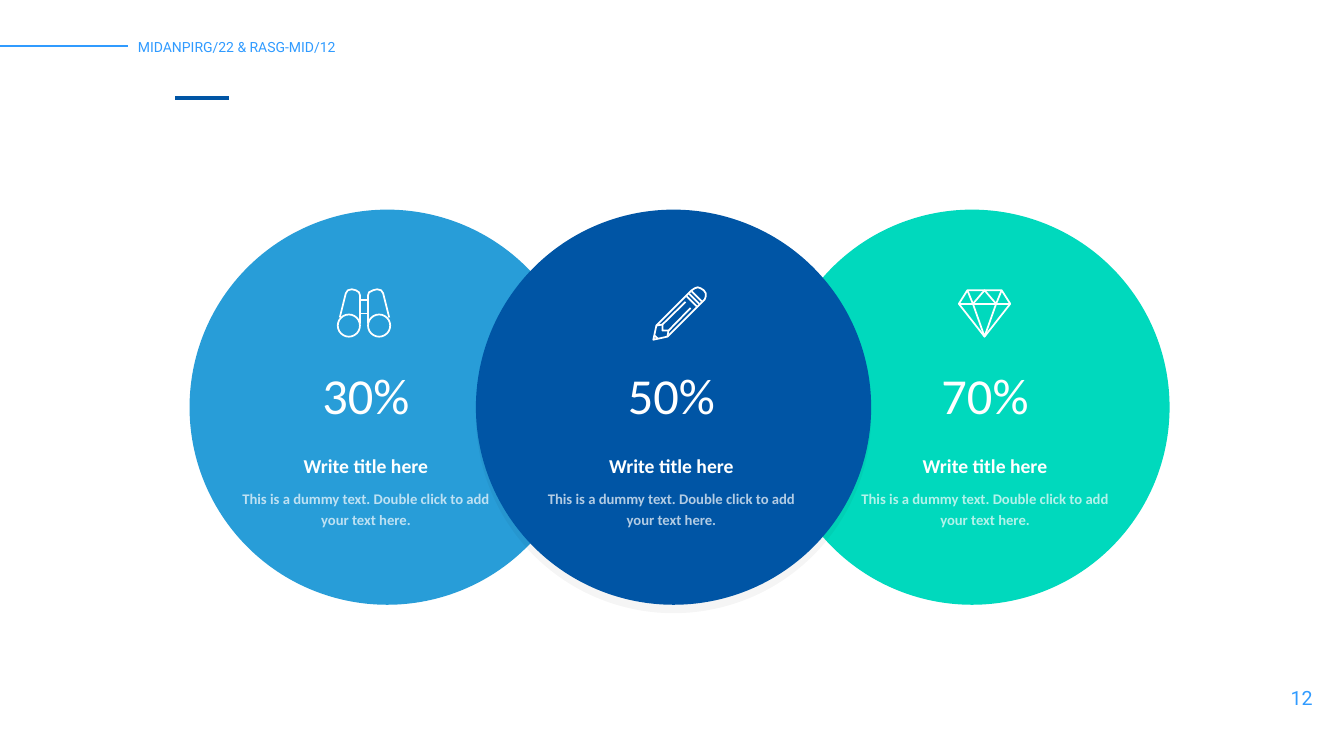
"""Build a slide of three overlapping circles with icons, percentages and captions."""
from lxml.etree import SubElement
from pptx import Presentation
from pptx.dml.color import RGBColor
from pptx.enum.shapes import MSO_CONNECTOR as Connector, MSO_SHAPE as Shape
from pptx.enum.text import MSO_ANCHOR as Anchor, PP_ALIGN as Align
from pptx.oxml.ns import qn
from pptx.util import Inches, Pt

WHITE, SKY, NAVY = "FFFFFF", "309BFF", "0055A5"


def paint(color_format, color, alpha=None):
    color_format.rgb = RGBColor.from_string(color)
    if alpha:
        srgb = color_format._color._xClr
        SubElement(srgb, qn("a:alpha"), val=str(alpha * 1000))


def write(box, paragraphs, align, margins, wrap, spacing=1.0):
    frame = slide.shapes.add_textbox(*map(Inches, box)).text_frame
    side, edge = map(Inches, margins)
    layout = {"word_wrap": wrap, "vertical_anchor": Anchor.TOP,
              "margin_left": side, "margin_right": side,
              "margin_top": edge, "margin_bottom": edge}
    for attribute, value in layout.items():
        setattr(frame, attribute, value)
    for index, (words, font, color, alpha) in enumerate(paragraphs):
        paragraph = frame.add_paragraph() if index else frame.paragraphs[0]
        paragraph.alignment = align
        paragraph.line_spacing = spacing
        if index:
            paragraph.space_before = Pt(6)
        run = paragraph.add_run()
        run.text = words
        for attribute, value in font.items():
            setattr(run.font, attribute, value)
        paint(run.font.color, color, alpha)


deck = Presentation()
deck.slide_width, deck.slide_height = Inches(13.33), Inches(7.5)
slide = deck.slides.add_slide(deck.slide_layouts[6])

page_font = {"name": "Roboto", "size": Pt(14)}
header_font = {"name": "Roboto", "size": Pt(10)}
percent_font = {"name": "Calibri", "size": Pt(36)}
heading_font = {"name": "Calibri", "size": Pt(14), "bold": True}
caption_font = {"name": "Calibri", "size": Pt(10.5), "bold": True}

write((12.31, 6.8, 1.2, 0.33), [("12", page_font, SKY, None)],
      Align.CENTER, (0, 0), False)
write((1.27, 0.33, 3.63, 0.27),
      [("MIDANPIRG/22 & RASG-MID/12", header_font, SKY, None)],
      Align.LEFT, (0.1, 0.05), True)

for start, end, height, color, width in [(0, 1.27, 0.46, SKY, 1.5),
                                         (1.74, 2.27, 0.97, NAVY, 3)]:
    rule = slide.shapes.add_connector(
        Connector.STRAIGHT, *map(Inches, (start, height, end, height)))
    rule.line.width = Pt(width)
    paint(rule.line.color, color)
    SubElement(rule._element.spPr, qn("a:effectLst"))

for left, color in [(1.88, "289DD8"), (7.68, "00D9BD"), (4.72, NAVY)]:
    circle = slide.shapes.add_shape(
        Shape.OVAL, *map(Inches, (left, 2.08, 3.92, 3.92)))
    circle.shadow.inherit = False
    circle.fill.solid()
    paint(circle.fill.fore_color, color)
    circle.line.fill.background()
    if color == NAVY:
        effects = circle._element.spPr.find(qn("a:effectLst"))
        shade = SubElement(effects, qn("a:outerShdw"), blurRad="0",
                           dist=str(Pt(6)), dir="5400000", algn="t",
                           rotWithShape="0")
        black = SubElement(shade, qn("a:srgbClr"), val="000000")
        SubElement(black, qn("a:alpha"), val="4000")

# Icon strokes are in hundredths of an inch from each icon's corner.
binoculars = [
    [(2, 31), (8, 7), (10, 4), (14, 3), (18, 4), (21, 6), (22, 9), (22, 37)],
    [(51, 31), (45, 7), (43, 4), (39, 3), (35, 4), (31, 6), (30, 9), (30, 37)],
    [(22, 14), (30, 14)],
    [(22, 27), (30, 27)],
]
pencil = [
    [(1, 53), (4, 39), (39, 4), (42, 2), (45, 1), (48, 2), (51, 4), (53, 7),
     (53, 10), (52, 13), (50, 15), (15, 50), (1, 53)],
    [(4, 39), (10, 38), (10, 44), (16, 44), (15, 50)],
    [(10, 38), (33, 15.5)],
    [(16, 44), (38, 21.5)],
    [(34, 10), (44, 20)],
    [(36.5, 7.5), (46.5, 17.5)],
    [(39, 5), (49, 15)],
    [(2.5, 49), (5, 51.5)],
]
diamond = [
    [(1, 14.5), (9.5, 1), (43.5, 1), (52, 14.5), (26.5, 47), (1, 14.5)],
    [(1, 14.5), (52, 14.5)],
    [(9.5, 1), (15, 14.5), (26.5, 47), (38, 14.5), (43.5, 1)],
    [(15, 14.5), (26.5, 1), (38, 14.5)],
]

columns = [(3.63, "30%", binoculars, 3.35, 2.84),
           (6.66, "50%", pencil, 6.47, 2.84),
           (9.77, "70%", diamond, 9.5, 2.87)]
for center, percent, strokes, icon_left, icon_top in columns:
    placed = [[(Inches(icon_left + x / 100), Inches(icon_top + y / 100))
               for x, y in stroke] for stroke in strokes]
    sketch = slide.shapes.build_freeform(*placed[0][0])
    for stroke in placed:
        sketch.move_to(*stroke[0])
        sketch.add_line_segments(stroke[1:], close=False)
    icon_parts = [sketch.convert_to_shape()]
    if strokes is binoculars:
        icon_parts += [slide.shapes.add_shape(
            Shape.OVAL, *map(Inches, (lens_left, 3.12, 0.22, 0.22)))
            for lens_left in (3.35, 3.65)]
    for part in icon_parts:
        part.shadow.inherit = False
        part.fill.background()
        part.line.width = Pt(1.25)
        paint(part.line.color, WHITE)
    for part in icon_parts[1:]:
        part.fill.solid()
        paint(part.fill.fore_color, "289DD8")

    write((center - 0.5, 3.56, 1, 0.71),
          [(percent, percent_font, WHITE, None)],
          Align.CENTER, (0, 0.05), False)
    write((center - 1.25, 4.41, 2.5, 0.89),
          [("Write title here", heading_font, WHITE, None),
           ("This is a dummy text. Double click to add your text here.",
            caption_font, WHITE, 70)],
          Align.CENTER, (0, 0.05), True, 1.2)

deck.save("out.pptx")
